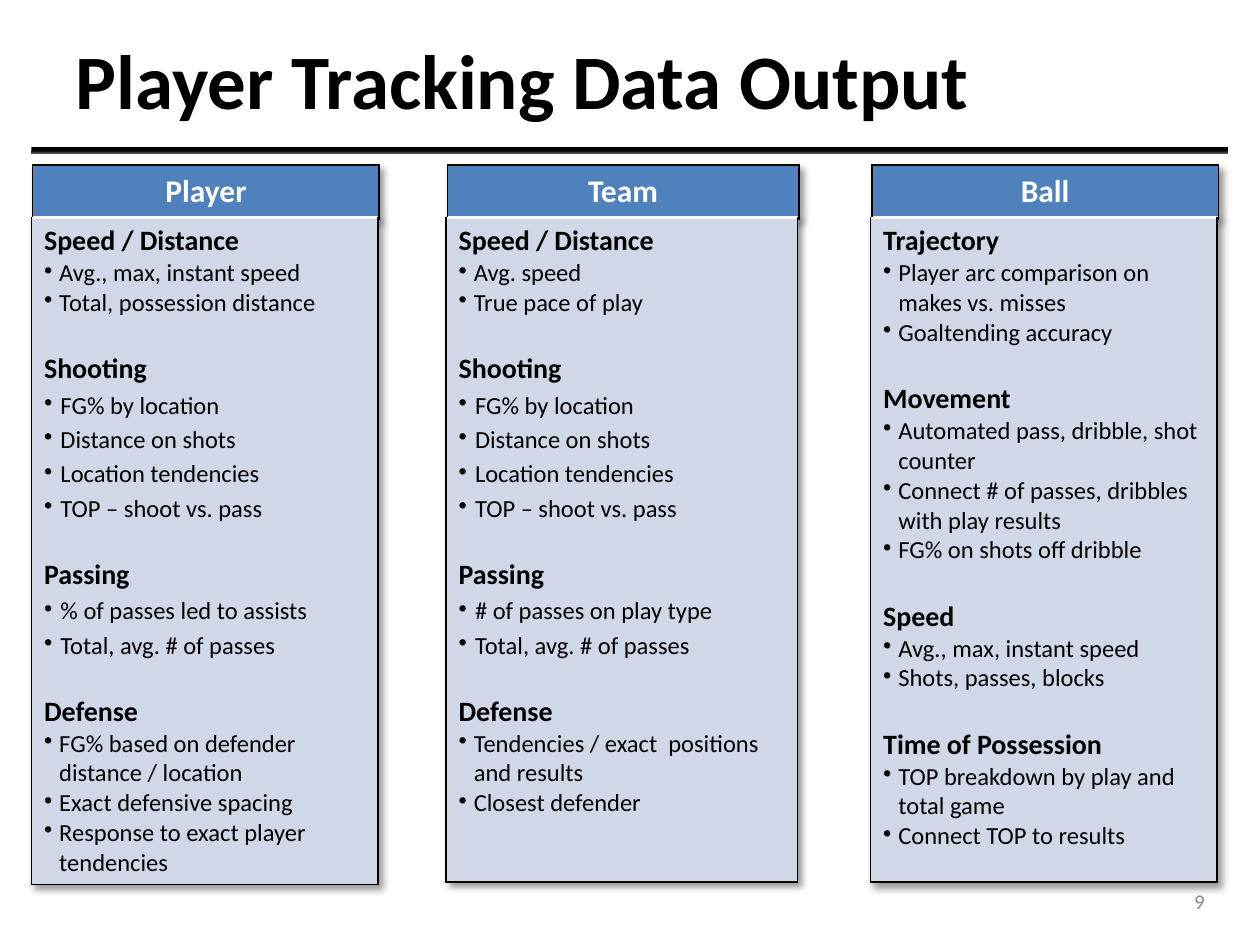
import pptx
import pptx.util
import pptx.oxml
import pptx.oxml.ns
import pptx.dml.color
import pptx.enum.text
import pptx.enum.shapes

Inches = pptx.util.Inches
Pt = pptx.util.Pt
Align = pptx.enum.text.PP_ALIGN
Anchor = pptx.enum.text.MSO_ANCHOR
NS = pptx.oxml.ns.nsdecls("a")

COLORS = {
    "ink": "000000", "paper": "FFFFFF", "head": "4F81BD",
    "body": "D0D8E8", "rule": "595959", "page": "8C8C8C",
}
SHOT = (1.15, "Shooting", ["FG% by location", "Distance on shots",
                           "Location tendencies", "TOP – shoot vs. pass"])
PANELS = [
    ("Player", 0.25, 2.75, [
        (1, "Speed / Distance", ["Avg., max, instant speed", "Total, possession distance"]),
        SHOT,
        (1.15, "Passing", ["% of passes led to assists", "Total, avg. # of passes"]),
        (1, "Defense", ["FG% based on defender distance / location",
                        "Exact defensive spacing",
                        "Response to exact player tendencies"]),
    ]),
    ("Team", 3.54, 2.79, [
        (1, "Speed / Distance", ["Avg. speed", "True pace of play"]),
        SHOT,
        (1.15, "Passing", ["# of passes on play type", "Total, avg. # of passes"]),
        (1, "Defense", ["Tendencies / exact  positions and results", "Closest defender"]),
    ]),
    ("Ball", 6.91, 2.75, [
        (1, "Trajectory", ["Player arc comparison on makes vs. misses", "Goaltending accuracy"]),
        (1, "Movement", ["Automated pass, dribble, shot counter",
                         "Connect # of passes, dribbles with play results",
                         "FG% on shots off dribble"]),
        (1, "Speed", ["Avg., max, instant speed", "Shots, passes, blocks"]),
        (1, "Time of Possession", ["TOP breakdown by play and total game",
                                   "Connect TOP to results"]),
    ]),
]


def assign(item, values):
    for name, value in values.items():
        setattr(item, name, value)


def tint(name):
    return pptx.dml.color.RGBColor.from_string(COLORS[name])


class Deck:
    font = "Calibri"

    def __init__(self, show):
        self.slide = show.slides.add_slide(show.slide_layouts[5])

    def text(self, para, words, size, color="ink", bold=False, **form):
        assign(para, form)
        run = para.add_run()
        run.text = words
        assign(run.font, {"name": self.font, "size": Pt(size), "bold": bold})
        run.font.color.rgb = tint(color)

    def title(self, words, *box):
        shape = self.slide.shapes.title
        assign(shape, dict(zip(("left", "top", "width", "height"), map(Inches, box))))
        shape.text_frame.vertical_anchor = Anchor.MIDDLE
        self.text(shape.text_frame.paragraphs[0], words, 44, bold=True, alignment=Align.LEFT)

    def rule(self, *box):
        bar = self.slide.shapes.add_shape(
            pptx.enum.shapes.MSO_SHAPE.RECTANGLE, *map(Inches, box))
        bar.shadow.inherit = False
        bar.line.fill.background()
        bar.fill.gradient()
        bar.fill.gradient_angle = 270
        for stop, place, name in zip(bar.fill.gradient_stops, (0.51, 1), ("ink", "rule")):
            stop.position = place
            stop.color.rgb = tint(name)

    def label(self, words, *box):
        frame = self.slide.shapes.add_textbox(*map(Inches, box)).text_frame
        assign(frame, {"word_wrap": True, "vertical_anchor": Anchor.MIDDLE})
        self.text(frame.paragraphs[0], words, 12, "page", alignment=Align.RIGHT)

    def table(self, fill, edges, *box):
        table = self.slide.shapes.add_table(1, 1, *map(Inches, box)).table
        assign(table, {"first_row": False, "horz_banding": False})
        table._tbl.tblPr.insert(0, pptx.oxml.parse_xml(
            f'<a:effectLst {NS}><a:outerShdw blurRad="50800" dist="38100" dir="2700000" '
            f'algn="tl" rotWithShape="0"><a:srgbClr val="{COLORS["ink"]}">'
            '<a:alpha val="40000"/></a:srgbClr></a:outerShdw></a:effectLst>'))
        cell = table.cell(0, 0)
        props = cell._tc.get_or_add_tcPr()
        for side in "LRTB":
            name, width = edges.get(side, ("ink", 1))
            props.append(pptx.oxml.parse_xml(
                f'<a:ln{side} {NS} w="{Pt(width)}"><a:solidFill>'
                f'<a:srgbClr val="{COLORS[name]}"/></a:solidFill></a:ln{side}>'))
        cell.fill.solid()
        cell.fill.fore_color.rgb = tint(fill)
        return cell

    def bullet(self, para, words, space):
        props = para._p.get_or_add_pPr()
        dent = Inches(0.12 if space == 1 else 0.13)
        props.set("marL", str(dent))
        props.set("indent", str(-dent))
        props.append(pptx.oxml.parse_xml(f'<a:buChar {NS} char="•"/>'))
        self.text(para, words, 14, line_spacing=float(space))

    def panel(self, name, left, width, groups):
        head = self.table("head", {"B": ("paper", 3)}, left + 0.01, 1.31, width, 0.42)
        head.vertical_anchor = Anchor.MIDDLE
        self.text(head.text_frame.paragraphs[0], name, 18, "paper", True,
                  alignment=Align.CENTER)
        frame = self.table("body", {"T": ("paper", 1)}, left, 1.73, width, 5.27).text_frame
        para = frame.paragraphs[0]
        for count, (space, topic, items) in enumerate(groups):
            if count:
                para = frame.add_paragraph()
                para.space_before = Pt(19.5)
            self.text(para, topic, 16, bold=True)
            for item in items:
                self.bullet(frame.add_paragraph(), item, space)


def main():
    show = pptx.Presentation()
    assign(show, {"slide_width": Inches(10), "slide_height": Inches(7.5)})
    deck = Deck(show)
    for panel in PANELS:
        deck.panel(*panel)
    deck.title("Player Tracking Data Output", 0.5, 0, 9.08, 1.25)
    deck.rule(0.25, 1.17, 9.5, 0.05)
    deck.label("9", 7.33, 6.95, 2.33, 0.4)
    show.save("out.pptx")


if __name__ == "__main__":
    main()
